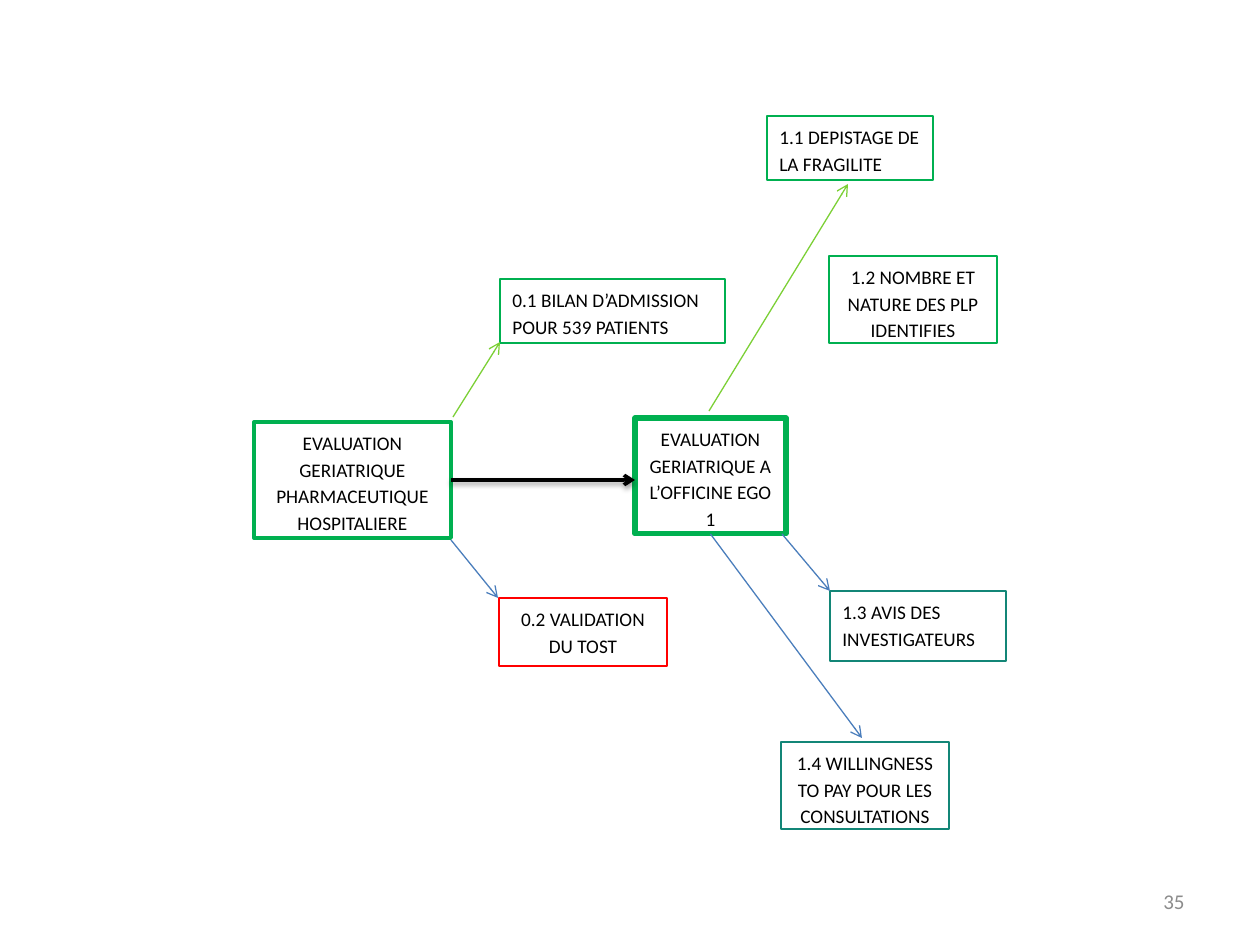
import pptx
import pptx.util
import pptx.dml.color
import pptx.enum.shapes
import pptx.enum.text
import pptx.oxml
import pptx.oxml.ns

PX = 914400 / 126
FONT = "Calibri"
COLORS = {
    "white": "FFFFFF", "black": "000000", "grey": "8C8C8C", "green": "00B050",
    "teal": "138677", "red": "FF0000", "lime": "7CD036", "blue": "4B7EBC",
}
ALIGN = pptx.enum.text.PP_ALIGN
ANCHOR = pptx.enum.text.MSO_ANCHOR


def px(*lengths):
    """Turn pixel lengths into EMU."""
    return [pptx.util.Emu(round(length * PX)) for length in lengths]


def write(shape, text, size, color, align, anchor):
    frame = shape.text_frame
    frame.word_wrap = True
    frame.vertical_anchor = anchor
    para = frame.paragraphs[0]
    para.alignment = align
    span = para.add_run()
    span.text = text
    span.font.name = FONT
    span.font.size = pptx.util.Pt(size)
    span.font.color.rgb = pptx.dml.color.RGBColor.from_string(COLORS[color])
    return para


deck = pptx.Presentation()
deck.slide_width, deck.slide_height = px(1260, 945)
page = deck.slides.add_slide(deck.slide_layouts[6])

number = page.shapes.add_textbox(*px(903, 876, 294, 50))
write(number, "35", 12, "grey", ALIGN.RIGHT, ANCHOR.MIDDLE)

# name: text, left, top, width, height, line colour, line width, alignment
boxes = {
    "hospital": ("EVALUATION GERIATRIQUE PHARMACEUTIQUE HOSPITALIERE",
                 254, 422, 197, 116, "green", 2.25, ALIGN.CENTER),
    "pharmacy": ("EVALUATION GERIATRIQUE A L’OFFICINE EGO 1",
                 635, 418, 151, 116, "green", 3, ALIGN.CENTER),
    "frailty": ("1.1 DEPISTAGE DE LA FRAGILITE",
                767, 116, 166, 64, "green", 0.75, ALIGN.LEFT),
    "problems": ("1.2 NOMBRE ET NATURE DES PLP IDENTIFIES",
                 829, 256, 168, 87, "green", 0.75, ALIGN.CENTER),
    "opinions": ("1.3 AVIS DES INVESTIGATEURS",
                 830, 591, 176, 70, "teal", 0.75, ALIGN.LEFT),
    "willingness": ("1.4 WILLINGNESS TO PAY POUR LES CONSULTATIONS",
                    781, 742, 168, 87, "teal", 0.75, ALIGN.CENTER),
    "admission": ("0.1 BILAN D’ADMISSION POUR 539 PATIENTS",
                  500, 279, 225, 64, "green", 0.75, ALIGN.LEFT),
    "validation": ("0.2 VALIDATION DU TOST",
                   499, 598, 168, 68, "red", 0.75, ALIGN.CENTER),
}
shapes = {}
for name, (text, left, top, width, height, color, weight, align) in boxes.items():
    box = page.shapes.add_shape(pptx.enum.shapes.MSO_SHAPE.RECTANGLE,
                                *px(left, top, width, height))
    box.shadow.inherit = False
    box.fill.solid()
    box.fill.fore_color.rgb = pptx.dml.color.RGBColor.from_string(COLORS["white"])
    box.line.color.rgb = pptx.dml.color.RGBColor.from_string(COLORS[color])
    box.line.width = pptx.util.Pt(weight)
    para = write(box, text, 11, "black", align, ANCHOR.TOP)
    para.line_spacing = 1.15
    para.space_after = pptx.util.Pt(0 if name == "pharmacy" else 10)
    shapes[name] = box

# start x, start y, end x, end y, colour, width, joined start (box, side)
arrows = [
    (451, 480, 635, 480, "black", 2, ("hospital", 3)),
    (782, 534, 830, 591, "blue", 0.75, None),
    (451, 540, 498, 598, "blue", 0.75, None),
    (709, 411, 848, 184, "lime", 0.75, None),
    (710, 534, 862, 738, "blue", 0.75, ("pharmacy", 2)),
    (453, 417, 500, 342, "lime", 0.75, None),
]
SHADOW = ('<a:outerShdw blurRad="39370" dist="20320" dir="5400000" rotWithShape="0">'
          '<a:srgbClr val="000000"><a:alpha val="38000"/></a:srgbClr></a:outerShdw>')
for x1, y1, x2, y2, color, weight, start in arrows:
    arrow = page.shapes.add_connector(pptx.enum.shapes.MSO_CONNECTOR.STRAIGHT,
                                      *px(x1, y1, x2, y2))
    arrow.line.color.rgb = pptx.dml.color.RGBColor.from_string(COLORS[color])
    arrow.line.width = pptx.util.Pt(weight)
    if start:
        arrow.begin_connect(shapes[start[0]], start[1])
    namespace = pptx.oxml.ns.nsdecls("a")
    arrow.line._get_or_add_ln().append(
        pptx.oxml.parse_xml(f'<a:tailEnd {namespace} type="arrow"/>'))
    effect = SHADOW if color == "black" else ""
    arrow._element.spPr.append(
        pptx.oxml.parse_xml(f"<a:effectLst {namespace}>{effect}</a:effectLst>"))

deck.save("out.pptx")
